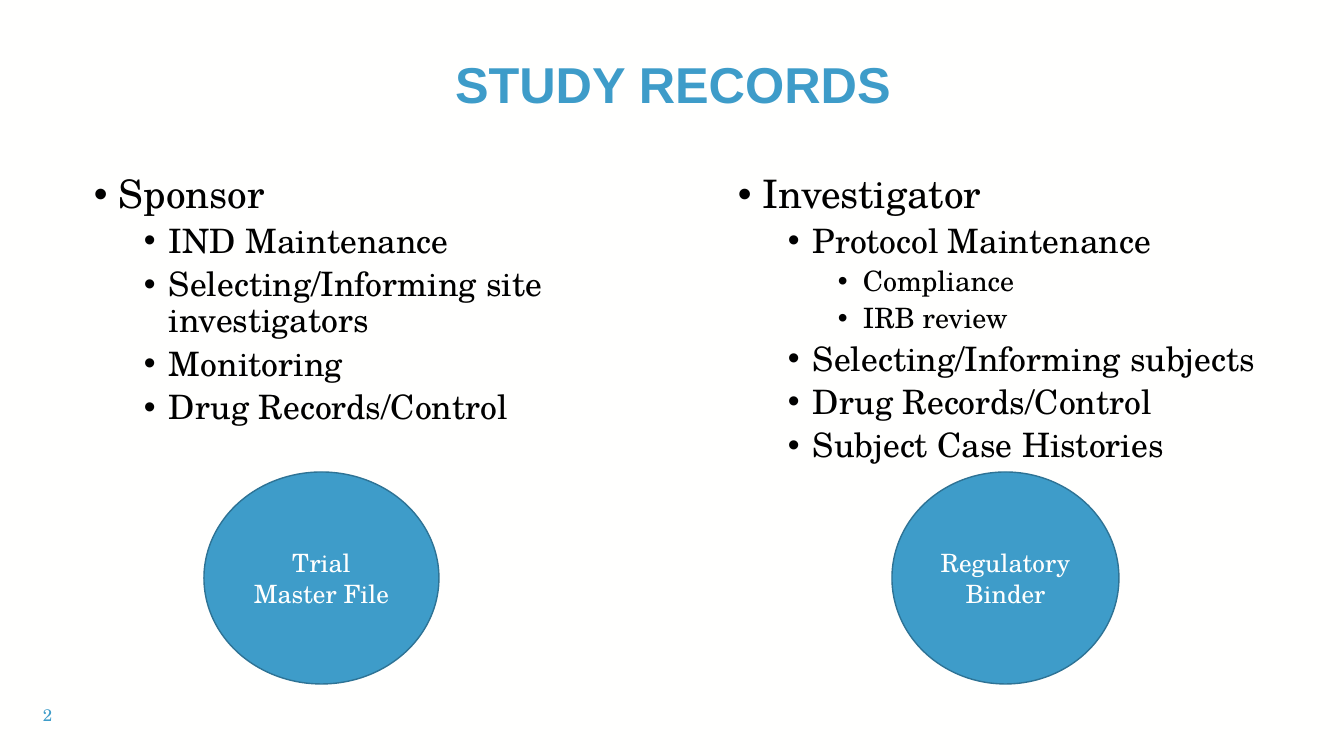
import pptx
import pptx.dml.color
import pptx.enum.shapes
import pptx.enum.text
import pptx.util
from lxml import etree
from pptx.oxml.ns import qn

PX = 914400 / 100.8
BLUE = pptx.dml.color.RGBColor(0x3E, 0x9C, 0xC9)
DARK_BLUE = pptx.dml.color.RGBColor(0x2E, 0x73, 0x95)
BLACK = pptx.dml.color.RGBColor(0, 0, 0)
OFF_WHITE = pptx.dml.color.RGBColor(0xFF, 0xFF, 0xFE)
HEADING_FONT = "Arial"
BODY_FONT = "TeX Gyre Schola"
LEVEL_SIZES = (28, 24, 20)
INDENT = 25
CENTER = pptx.enum.text.PP_ALIGN.CENTER
MIDDLE = pptx.enum.text.MSO_ANCHOR.MIDDLE

SPONSOR_DUTIES = [
    (0, "Sponsor"),
    (1, "IND Maintenance"),
    (1, "Selecting/Informing site investigators"),
    (1, "Monitoring"),
    (1, "Drug Records/Control"),
]
INVESTIGATOR_DUTIES = [
    (0, "Investigator"),
    (1, "Protocol Maintenance"),
    (2, "Compliance"),
    (2, "IRB review"),
    (1, "Selecting/Informing subjects"),
    (1, "Drug Records/Control"),
    (1, "Subject Case Histories"),
]


def emu(*lengths):
    """Turn pixel lengths into whole EMU."""
    return [round(length * PX) for length in lengths]


def style(para, size, color, name=BODY_FONT, bold=False):
    """Set the font of a whole paragraph."""
    para.font.size = pptx.util.Pt(size)
    para.font.color.rgb = color
    para.font.name = name
    para.font.bold = bold


def add_text_frame(page, box):
    """Add a wrapping text box and return its text frame."""
    frame = page.shapes.add_textbox(*emu(*box)).text_frame
    frame.word_wrap = True
    return frame


def add_title(page, box, text):
    """Add the centred slide title."""
    frame = add_text_frame(page, box)
    frame.vertical_anchor = MIDDLE
    para = frame.paragraphs[0]
    para.text = text
    para.alignment = CENTER
    para.line_spacing = 0.9
    style(para, 36, BLUE, HEADING_FONT, True)


def add_bullets(page, box, items):
    """Add a bulleted list of (level, text) items."""
    frame = add_text_frame(page, box)
    for index, (level, text) in enumerate(items):
        para = frame.add_paragraph() if index else frame.paragraphs[0]
        para.text = text
        para.level = level
        para.line_spacing = 0.9
        if index:
            para.space_before = pptx.util.Pt(5)
        margin, hanging = emu(INDENT * (1 + 2 * level), -INDENT)
        properties = para._p.get_or_add_pPr()
        properties.set("marL", str(margin))
        properties.set("indent", str(hanging))
        etree.SubElement(properties, qn("a:buFont")).set("typeface", "Arial")
        etree.SubElement(properties, qn("a:buChar")).set("char", "•")
        style(para, LEVEL_SIZES[level], BLACK)


def add_record_circle(page, box, text):
    """Add a filled ellipse naming a set of records."""
    oval = pptx.enum.shapes.MSO_SHAPE.OVAL
    circle = page.shapes.add_shape(oval, *emu(*box))
    circle.shadow.inherit = False
    circle.fill.solid()
    circle.fill.fore_color.rgb = BLUE
    circle.line.color.rgb = DARK_BLUE
    circle.line.width = pptx.util.Pt(1)
    frame = circle.text_frame
    frame.word_wrap = True
    frame.vertical_anchor = MIDDLE
    para = frame.paragraphs[0]
    para.text = text
    para.alignment = CENTER
    style(para, 18, OFF_WHITE)


def add_page_number(page, box, number):
    """Add the slide number."""
    frame = add_text_frame(page, box)
    frame.vertical_anchor = MIDDLE
    para = frame.paragraphs[0]
    para.text = str(number)
    style(para, 12, BLUE)


def main():
    """Build and save the study records slide."""
    deck = pptx.Presentation()
    deck.slide_width, deck.slide_height = emu(1344, 756)
    page = deck.slides.add_slide(deck.slide_layouts[6])
    page.background.fill.solid()
    page.background.fill.fore_color.rgb = OFF_WHITE
    add_page_number(page, (33, 695, 50, 40), 2)
    add_title(page, (84, 32, 1178, 111), "STUDY RECORDS")
    add_bullets(page, (84, 170, 513, 486), SPONSOR_DUTIES)
    add_bullets(page, (728, 170, 592, 486), INVESTIGATOR_DUTIES)
    add_record_circle(page, (204, 472, 235, 212), "Trial Master File")
    add_record_circle(page, (892, 472, 227, 212), "Regulatory Binder")
    deck.save("out.pptx")


if __name__ == "__main__":
    main()
